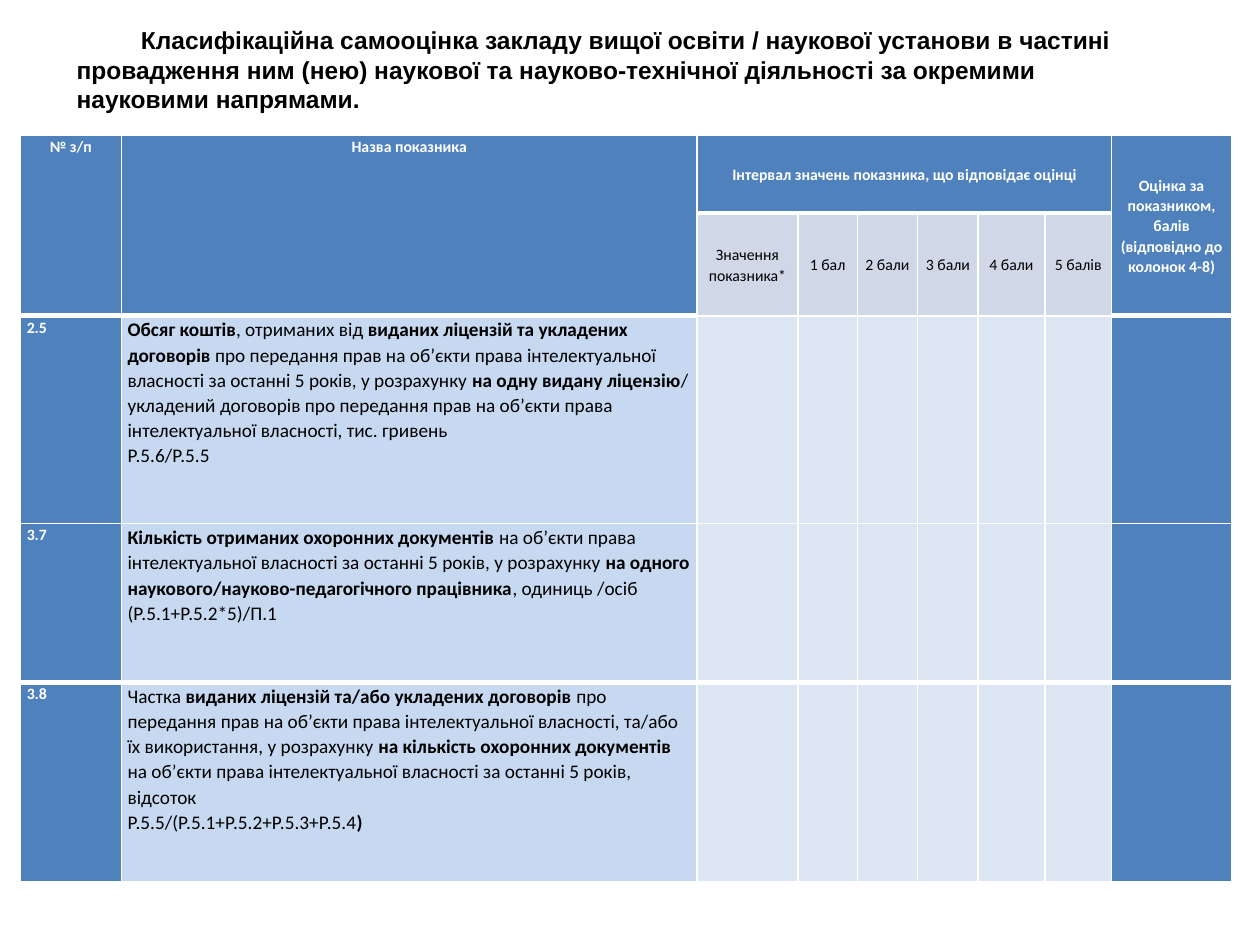
from lxml import etree
from pptx import Presentation
from pptx.dml.color import RGBColor
from pptx.enum import shapes, text
from pptx.oxml.ns import qn
from pptx.util import Pt

COLORS = {
    "white": "FFFFFF",
    "black": "000000",
    "header": "4F81BD",
    "scale": "D0D8E8",
    "indicator": "C6D9F1",
    "score": "DCE6F2",
}

TITLE = (
    "Класифікаційна самооцінка закладу вищої освіти / наукової установи в частині "
    "провадження ним (нею) наукової та науково-технічної діяльності за окремими "
    "науковими напрямами."
)
SCALE = ["Значення показника*", "1 бал", "2 бали", "3 бали", "4 бали", "5 балів"]
# Text between bars is bold.
INDICATORS = [
    ("2.5", [
        "|Обсяг коштів|, отриманих від |виданих ліцензій та укладених договорів| про "
        "передання прав на об’єкти права інтелектуальної власності за останні 5 років, "
        "у розрахунку |на одну видану ліцензію|/ укладений договорів про передання прав "
        "на об’єкти права інтелектуальної власності, тис. гривень",
        "Р.5.6/Р.5.5",
    ]),
    ("3.7", [
        "|Кількість отриманих охоронних документів| на об’єкти права інтелектуальної "
        "власності за останні 5 років, у розрахунку |на одного "
        "наукового/науково-педагогічного працівника|, одиниць /осіб",
        "(Р.5.1+Р.5.2*5)/П.1",
    ]),
    ("3.8", [
        "Частка| виданих ліцензій та/або укладених договорів |про передання прав на "
        "об’єкти права інтелектуальної власності, та/або їх використання, у розрахунку"
        "| на кількість охоронних документів |на об’єкти права інтелектуальної власності "
        "за останні 5 років, відсоток",
        "Р.5.5/(Р.5.1+Р.5.2+Р.5.3+Р.5.4|)|",
    ]),
]

COLUMN_WIDTHS = [57.6, 329, 57.6, 34, 34.5, 34.5, 38.2, 38.2, 68.4]
ROW_HEIGHTS = [44.6, 51.8, 118.8, 90.7, 113.8]
FIRST_SCALE, LAST_SCALE = 2, 7
LAST_COLUMN = len(COLUMN_WIDTHS) - 1


def rgb(name):
    return RGBColor.from_string(COLORS[name])


def style_font(font, name, size, color, bold=None):
    font.name, font.size, font.bold = name, Pt(size), bold
    font.color.rgb = rgb(color)


def write_cell(cell, paragraphs, size=9, color="white", bold=True,
               align=text.PP_ALIGN.CENTER, anchor=text.MSO_ANCHOR.TOP):
    """Write paragraphs; bars switch bold on and off where bold is None."""
    cell.vertical_anchor = anchor
    cell.margin_left = cell.margin_right = Pt(3.6)
    cell.margin_top, cell.margin_bottom = Pt(0.7), Pt(0)
    frame = cell.text_frame
    for i, content in enumerate(paragraphs):
        paragraph = frame.add_paragraph() if i else frame.paragraphs[0]
        paragraph.alignment, paragraph.line_spacing = align, 1.06
        style_font(paragraph.font, "Calibri", size, color, bold)
        for part, words in enumerate(content.split("|")):
            if words:
                run = paragraph.add_run()
                run.text = words
                if bold is None:
                    run.font.bold = part % 2 == 1


def bottom_width(row, column):
    """Thick rules close the two header levels and set off the last row."""
    in_scale = FIRST_SCALE <= column <= LAST_SCALE
    return 3 if row in (0, 3) or (row == 1 and not in_scale) else 1


def add_borders(cell, row, column):
    top = bottom_width(row - 1, column) if row else 1
    widths = {"lnL": 1, "lnR": 1, "lnT": top, "lnB": bottom_width(row, column)}
    properties = cell._tc.get_or_add_tcPr()
    for i, (side, width) in enumerate(widths.items()):
        line = etree.Element(qn(f"a:{side}"), w=str(Pt(width)))
        fill = etree.SubElement(line, qn("a:solidFill"))
        etree.SubElement(fill, qn("a:srgbClr"), val=COLORS["white"])
        properties.insert(i, line)


def fill_name(row, column):
    if column in (0, LAST_COLUMN) or row == 0:
        return "header"
    if column == 1:
        return "header" if row == 1 else "indicator"
    return "scale" if row == 1 else "score"


def add_title(slide, left, top, width, height):
    box = slide.shapes.add_shape(
        shapes.MSO_SHAPE.RECTANGLE, Pt(left), Pt(top), Pt(width), Pt(height))
    box.shadow.inherit = False
    box.fill.solid()
    box.fill.fore_color.rgb = rgb("white")
    box.line.fill.background()
    frame = box.text_frame
    frame.word_wrap = True
    frame.vertical_anchor = text.MSO_ANCHOR.TOP
    frame.margin_top = Pt(5)
    paragraph = frame.paragraphs[0]
    paragraph.text = TITLE
    paragraph.alignment = text.PP_ALIGN.LEFT
    paragraph._p.get_or_add_pPr().set("indent", str(Pt(36.7)))
    style_font(paragraph.font, "Arial", 14, "black", True)


def write_header(table):
    middle = text.MSO_ANCHOR.MIDDLE
    for column, label in ((0, "№ з/п"), (1, "Назва показника")):
        write_cell(table.cell(0, column), [label])
    write_cell(table.cell(0, FIRST_SCALE),
               ["Інтервал значень показника, що відповідає оцінці"], anchor=middle)
    write_cell(table.cell(0, LAST_COLUMN),
               ["Оцінка за показником, балів", "(відповідно до колонок 4-8)"],
               anchor=middle)
    for column, label in enumerate(SCALE, FIRST_SCALE):
        write_cell(table.cell(1, column), [label], color="black", bold=False,
                   anchor=middle)
    for column in (0, 1, LAST_COLUMN):
        table.cell(0, column).merge(table.cell(1, column))
    table.cell(0, FIRST_SCALE).merge(table.cell(0, LAST_SCALE))


def add_indicator_table(slide, left, top):
    table = slide.shapes.add_table(
        len(ROW_HEIGHTS), len(COLUMN_WIDTHS), Pt(left), Pt(top),
        Pt(sum(COLUMN_WIDTHS)), Pt(sum(ROW_HEIGHTS))).table
    table.first_row = table.horz_banding = False
    for column, width in zip(table.columns, COLUMN_WIDTHS):
        column.width = Pt(width)
    for row, height in zip(table.rows, ROW_HEIGHTS):
        row.height = Pt(height)
    for r in range(len(ROW_HEIGHTS)):
        for c in range(len(COLUMN_WIDTHS)):
            cell = table.cell(r, c)
            cell.fill.solid()
            cell.fill.fore_color.rgb = rgb(fill_name(r, c))
            add_borders(cell, r, c)
    write_header(table)
    for r, (number, description) in enumerate(INDICATORS, 2):
        write_cell(table.cell(r, 0), [number], align=text.PP_ALIGN.JUSTIFY)
        write_cell(table.cell(r, 1), description, size=11, color="black",
                   bold=None, align=text.PP_ALIGN.LEFT)


def main():
    deck = Presentation()
    deck.slide_width, deck.slide_height = Pt(720), Pt(540)
    slide = deck.slides.add_slide(deck.slide_layouts[6])
    add_title(slide, 36.7, 9.4, 640.8, 79.9)
    add_indicator_table(slide, 11.7, 77.2)
    deck.save("out.pptx")


if __name__ == "__main__":
    main()
